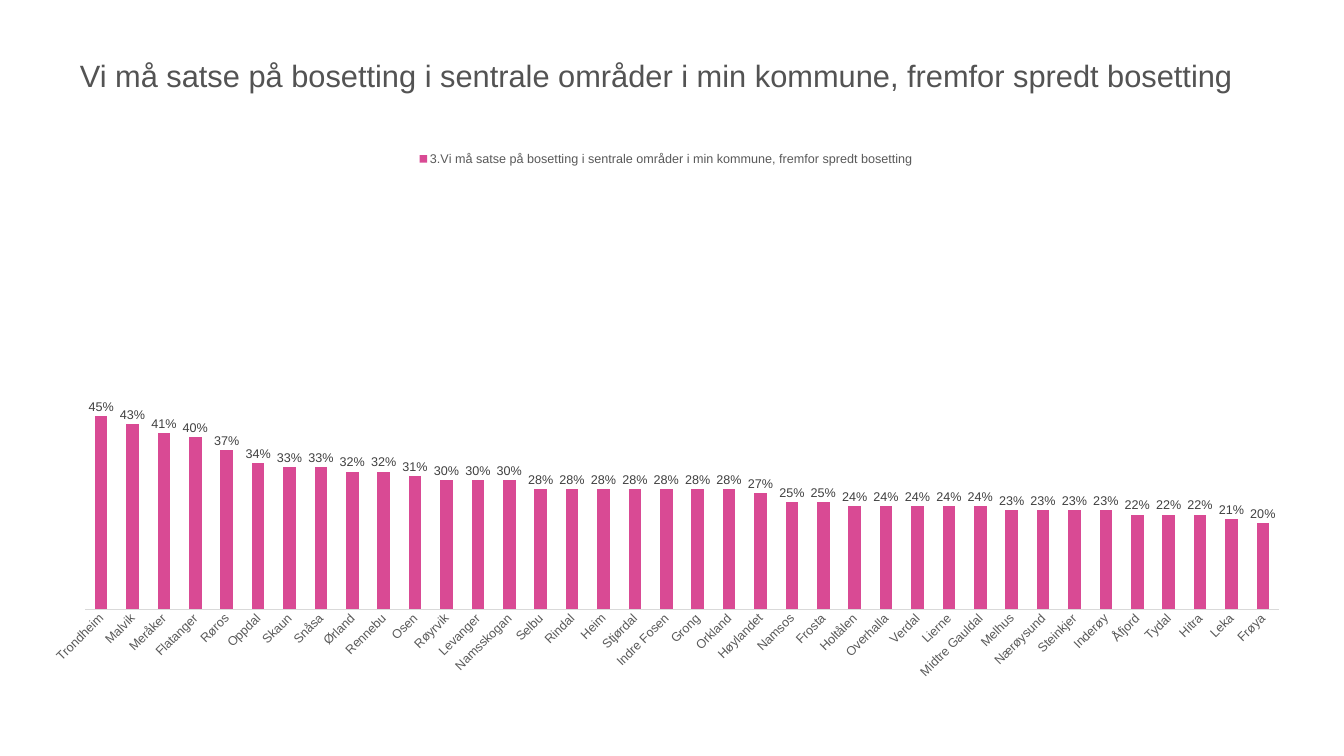
from pptx import Presentation
from pptx.chart.data import CategoryChartData
from pptx.dml.color import RGBColor
from pptx.enum.chart import (
    XL_CHART_TYPE as ChartType,
    XL_LABEL_POSITION as LabelPosition,
    XL_LEGEND_POSITION as LegendPosition,
    XL_TICK_MARK as TickMark,
)
from pptx.enum.text import MSO_ANCHOR as Anchor
from pptx.util import Pt

PINK = RGBColor(0xD9, 0x4A, 0x94)
TITLE_GREY = RGBColor(0x53, 0x53, 0x53)
AXIS_GREY = RGBColor(0x59, 0x59, 0x59)
LABEL_GREY = RGBColor(0x40, 0x40, 0x40)
LINE_GREY = RGBColor(0xD9, 0xD9, 0xD9)
FONT = "Arial"

STATEMENT = "Vi må satse på bosetting i sentrale områder i min kommune, fremfor spredt bosetting"
AGREEMENT = {
    "Trondheim": 45, "Malvik": 43, "Meråker": 41, "Flatanger": 40, "Røros": 37,
    "Oppdal": 34, "Skaun": 33, "Snåsa": 33, "Ørland": 32, "Rennebu": 32,
    "Osen": 31, "Røyrvik": 30, "Levanger": 30, "Namsskogan": 30, "Selbu": 28,
    "Rindal": 28, "Heim": 28, "Stjørdal": 28, "Indre Fosen": 28, "Grong": 28,
    "Orkland": 28, "Høylandet": 27, "Namsos": 25, "Frosta": 25, "Holtålen": 24,
    "Overhalla": 24, "Verdal": 24, "Lierne": 24, "Midtre Gauldal": 24,
    "Melhus": 23, "Nærøysund": 23, "Steinkjer": 23, "Inderøy": 23,
    "Åfjord": 22, "Tydal": 22, "Hitra": 22, "Leka": 21, "Frøya": 20,
}


def format_font(font, size, color):
    font.name = FONT
    font.size = Pt(size)
    font.bold = False
    font.color.rgb = color


def add_text(slide, text, box, *, size, color, anchor, inset):
    frame = slide.shapes.add_textbox(*map(Pt, box)).text_frame
    frame.word_wrap = True
    frame.vertical_anchor = anchor
    frame.margin_left = frame.margin_right = Pt(inset)
    frame.margin_top = frame.margin_bottom = Pt(inset)
    run = frame.paragraphs[0].add_run()
    run.text = text
    format_font(run.font, size, color)


def add_agreement_chart(slide, box):
    data = CategoryChartData(number_format="0%")
    data.categories = list(AGREEMENT)
    data.add_series("3." + STATEMENT, [percent / 100 for percent in AGREEMENT.values()])
    chart = slide.shapes.add_chart(
        ChartType.COLUMN_CLUSTERED, *map(Pt, box), data
    ).chart
    chart.has_title = False
    format_font(chart.font, 18, AXIS_GREY)

    chart.has_legend = True
    chart.legend.position = LegendPosition.TOP
    chart.legend.include_in_layout = False
    format_font(chart.legend.font, 18, AXIS_GREY)

    municipalities = chart.category_axis
    municipalities.major_tick_mark = TickMark.NONE
    municipalities.minor_tick_mark = TickMark.NONE
    municipalities.format.line.color.rgb = LINE_GREY
    municipalities.format.line.width = Pt(0.75)
    format_font(municipalities.tick_labels.font, 18, AXIS_GREY)
    municipalities._element.txPr.bodyPr.set("rot", "-2700000")

    shares = chart.value_axis
    shares.minimum_scale = 0
    shares.maximum_scale = 1
    shares.has_major_gridlines = False
    shares.visible = False

    columns = chart.plots[0]
    columns.gap_width = 150
    columns.overlap = -25
    columns.vary_by_categories = False
    agreement = columns.series[0]
    agreement.invert_if_negative = False
    agreement.format.fill.solid()
    agreement.format.fill.fore_color.rgb = PINK

    percentages = agreement.data_labels
    percentages.show_value = True
    percentages.number_format = "0%"
    percentages.number_format_is_linked = False
    percentages.position = LabelPosition.OUTSIDE_END
    format_font(percentages.font, 18, LABEL_GREY)


def main():
    deck = Presentation()
    deck.slide_width = Pt(1920)
    deck.slide_height = Pt(1080)
    slide = deck.slides.add_slide(deck.slide_layouts[6])
    add_text(slide, STATEMENT, (110, 34, 1770, 147),
             size=44, color=TITLE_GREY, anchor=Anchor.MIDDLE, inset=4)
    add_agreement_chart(slide, (40, 208, 1823, 777.6))
    deck.save("out.pptx")


if __name__ == "__main__":
    main()
